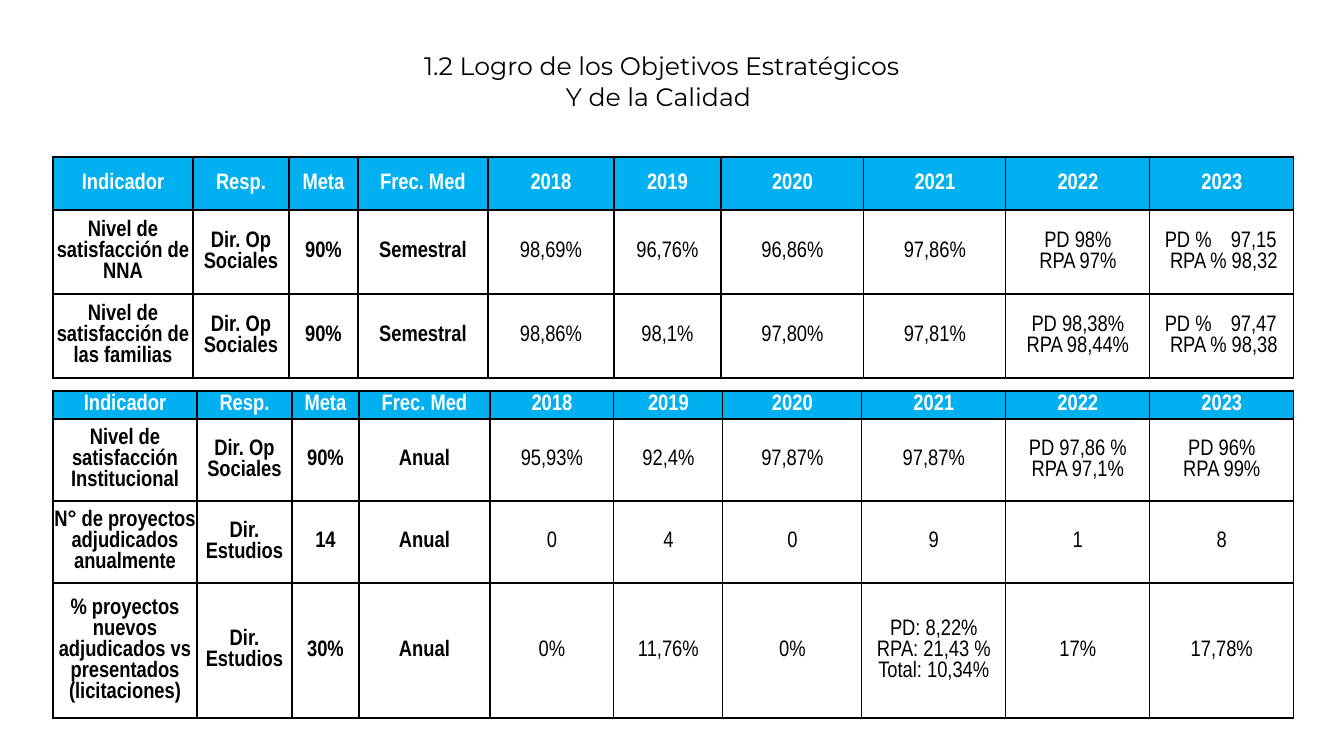
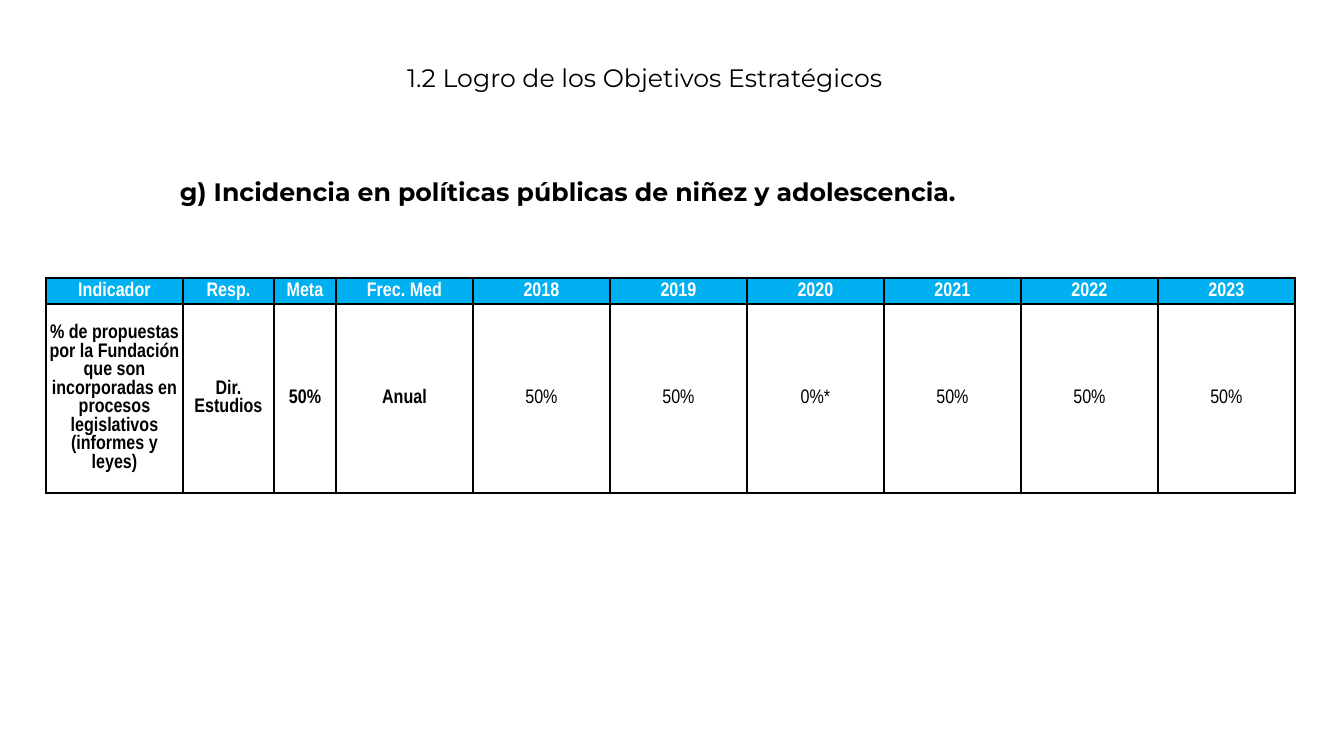
"""Builds the two slides on strategic objective indicators."""
from lxml.etree import SubElement as add_element
from pptx import Presentation
from pptx.dml.color import RGBColor
from pptx.enum.text import MSO_ANCHOR as Anchor, MSO_AUTO_SIZE as AutoSize, PP_ALIGN as Align
from pptx.oxml.ns import qn
from pptx.util import Emu, Pt

SLIDE_WIDTH, SLIDE_HEIGHT = 1344, 756
EMU_PER_PX = 12192000 / SLIDE_WIDTH
TITLE_ONLY = 5
COLORS = {"header": "00B0F0", "header_text": "FFFFFF", "cell": "FFFFFF",
          "text": "000000", "border": "000000"}
HEADING_FONT, TABLE_FONT = "Montserrat", "Arial Narrow"
HEADING_SIZE = 18
LABEL_COLUMNS = 4
TAB_STOP, TAB_MARGIN_LEFT, TAB_MARGIN_RIGHT = 66, 15, 11
HEADER = ["Indicador", "Resp.", "Meta", "Frec. Med",
          "2018", "2019", "2020", "2021", "2022", "2023"]
TITLE = " 1.2 Logro de los Objetivos Estratégicos"

SATISFACTION_ROWS = [
    ["Nivel de satisfacción de NNA", "Dir. Op Sociales", "90%", "Semestral",
     "98,69%", "96,76%", "96,86%", "97,86%", "PD 98%\nRPA 97%",
     "PD %\t97,15\nRPA % 98,32"],
    ["Nivel de satisfacción de las familias", "Dir. Op Sociales", "90%", "Semestral",
     "98,86%", "98,1%", "97,80%", "97,81%", "PD 98,38%\nRPA 98,44%",
     "PD %\t97,47\nRPA % 98,38"],
]
INSTITUTION_ROWS = [
    ["Nivel de satisfacción Institucional", "Dir. Op Sociales", "90%", "Anual",
     "95,93%", "92,4%", "97,87%", "97,87%", "PD 97,86 %\nRPA 97,1%",
     "PD 96%\nRPA 99%"],
    ["N° de proyectos adjudicados anualmente", "Dir. Estudios", "14", "Anual",
     "0", "4", "0", "9", "1", "8"],
    ["% proyectos nuevos adjudicados vs presentados (licitaciones)", "Dir. Estudios",
     "30%", "Anual", "0%", "11,76%", "0%",
     "PD: 8,22%\nRPA: 21,43 %\nTotal: 10,34%", "17%", "17,78%"],
]
POLICY_ROWS = [
    ["% de propuestas por la Fundación que son incorporadas en procesos "
     "legislativos (informes y leyes)", "Dir. Estudios", "50%", "Anual",
     "50%", "50%", "0%*", "50%", "50%", "50%"],
]


def px(length):
    """Turn px into EMU."""
    return Emu(round(length * EMU_PER_PX))


def color(name):
    """Look up a palette color."""
    return RGBColor.from_string(COLORS[name])


def set_font(paragraph, name, size, color_name, bold=False):
    """Format a whole paragraph."""
    font = paragraph.font
    font.name, font.size, font.bold = name, Pt(size), bold
    font.color.rgb = color(color_name)


def write_heading(shape, box, text, align, bold=False):
    """Place a heading in its box and style its text."""
    shape.left, shape.top, shape.width, shape.height = map(px, box)
    frame = shape.text_frame
    frame.text = text
    frame.word_wrap = True
    frame.auto_size = AutoSize.NONE
    frame.vertical_anchor = Anchor.MIDDLE
    for paragraph in frame.paragraphs:
        paragraph.alignment = align
        set_font(paragraph, HEADING_FONT, HEADING_SIZE, "text", bold)


def add_borders(cell):
    """Draw a thin line on every side of a cell."""
    properties = cell._tc.get_or_add_tcPr()
    for side in ("a:lnL", "a:lnR", "a:lnT", "a:lnB"):
        line = add_element(properties, qn(side), w=str(Pt(1)))
        fill = add_element(line, qn("a:solidFill"))
        add_element(fill, qn("a:srgbClr"), val=COLORS["border"])


def add_tab_stop(paragraph):
    """Align the value after a tab at a fixed place."""
    tabs = add_element(paragraph._p.get_or_add_pPr(), qn("a:tabLst"))
    add_element(tabs, qn("a:tab"), pos=str(px(TAB_STOP)), algn="l")


def write_cell(cell, text, size, is_header, bold):
    """Fill one table cell."""
    cell.text = text
    cell.vertical_anchor = Anchor.MIDDLE
    has_tab = "\t" in text
    cell.margin_left = px(TAB_MARGIN_LEFT if has_tab else 0)
    cell.margin_right = px(TAB_MARGIN_RIGHT if has_tab else 0)
    cell.margin_top = cell.margin_bottom = 0
    add_borders(cell)
    cell.fill.solid()
    cell.fill.fore_color.rgb = color("header" if is_header else "cell")
    for paragraph, line in zip(cell.text_frame.paragraphs, text.split("\n")):
        paragraph.alignment = Align.CENTER
        if "\t" in line:
            paragraph.alignment = Align.LEFT
            add_tab_stop(paragraph)
        set_font(paragraph, TABLE_FONT, size,
                 "header_text" if is_header else "text", bold)


def add_indicator_table(slide, left, top, widths, heights, rows, size=16):
    """Add a table of indicators under the shared header row."""
    table = slide.shapes.add_table(
        len(heights), len(widths), px(left), px(top),
        px(sum(widths)), px(sum(heights))).table
    table.first_row = table.horz_banding = False
    for column, width in zip(table.columns, widths):
        column.width = px(width)
    for row, height in zip(table.rows, heights):
        row.height = px(height)
    for row_index, texts in enumerate([HEADER, *rows]):
        is_header = row_index == 0
        for column_index, text in enumerate(texts):
            write_cell(table.cell(row_index, column_index), text, size, is_header,
                       is_header or column_index < LABEL_COLUMNS)


def add_titled_slide(presentation, title, left, top):
    """Add a slide with the shared title style."""
    slide = presentation.slides.add_slide(presentation.slide_layouts[TITLE_ONLY])
    write_heading(slide.shapes.title, (left, top, 817, 82), title, Align.CENTER)
    return slide


def add_quality_slide(presentation):
    """Build the slide on objectives and quality."""
    slide = add_titled_slide(presentation, TITLE + "\nY de la Calidad", 250, 40)
    add_indicator_table(slide, 53, 157,
                        [140, 96, 69, 130, 126, 107, 143, 142, 144, 144],
                        [53, 84, 84], SATISFACTION_ROWS)
    add_indicator_table(slide, 53, 391,
                        [144, 95, 67, 131, 124, 109, 139, 144, 144, 144],
                        [28, 82, 82, 135], INSTITUTION_ROWS)


def add_policy_slide(presentation):
    """Build the slide on public policy."""
    slide = add_titled_slide(presentation, TITLE, 233, 36)
    write_heading(slide.shapes.add_textbox(0, 0, 0, 0), (163, 150, 813, 82),
                  " g) Incidencia en políticas públicas de niñez y adolescencia.",
                  Align.LEFT, bold=True)
    add_indicator_table(slide, 46, 278, [137, 91, 62] + [137] * 7,
                        [26, 189], POLICY_ROWS, size=14)


def main():
    """Build and save the presentation."""
    presentation = Presentation()
    presentation.slide_width, presentation.slide_height = px(SLIDE_WIDTH), px(SLIDE_HEIGHT)
    add_quality_slide(presentation)
    add_policy_slide(presentation)
    presentation.save("out.pptx")


if __name__ == "__main__":
    main()
